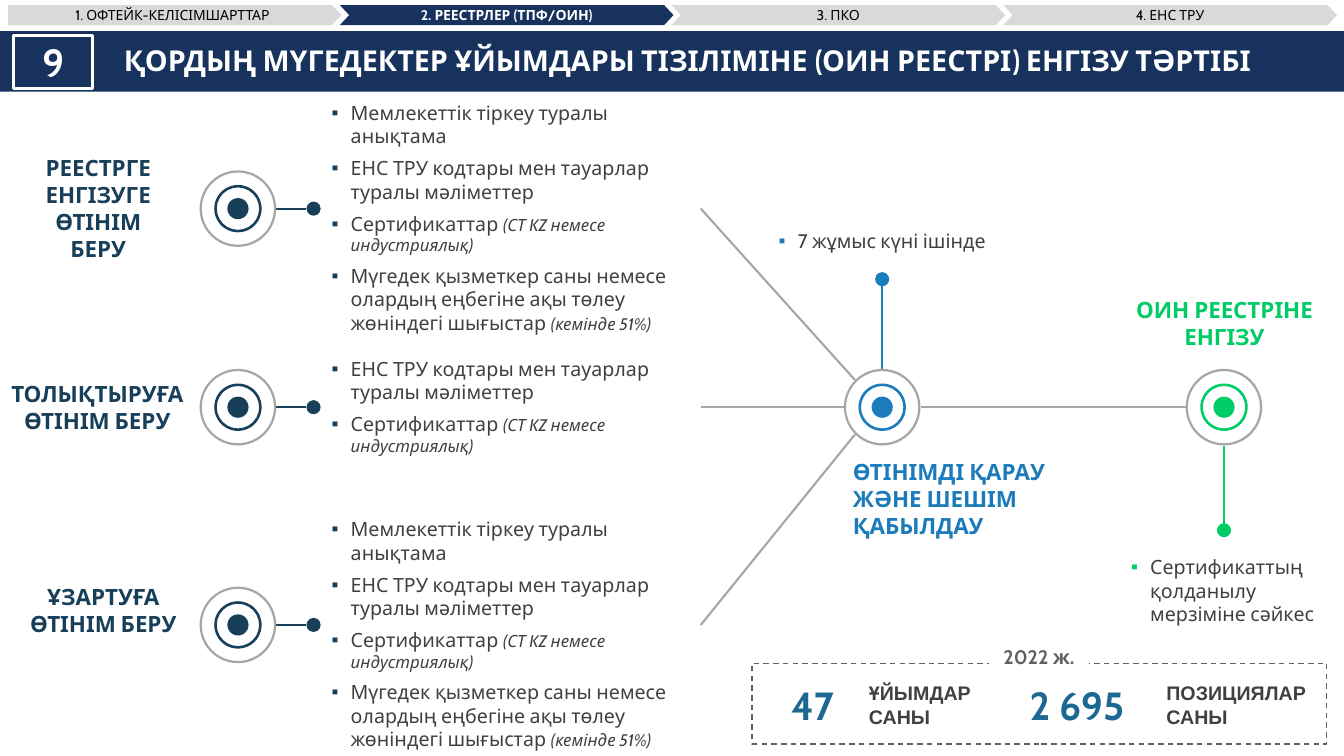
from lxml import etree
from pptx import Presentation
from pptx.dml.color import RGBColor
from pptx.enum.dml import MSO_LINE
from pptx.enum.shapes import MSO_CONNECTOR, MSO_SHAPE
from pptx.enum.text import MSO_ANCHOR, MSO_AUTO_SIZE, PP_ALIGN
from pptx.oxml.ns import qn
from pptx.util import Inches, Pt

RECT, OVAL, DONUT = MSO_SHAPE.RECTANGLE, MSO_SHAPE.OVAL, MSO_SHAPE.DONUT
CHEVRON, PENTAGON = MSO_SHAPE.CHEVRON, MSO_SHAPE.PENTAGON
STRAIGHT, DASH = MSO_CONNECTOR.STRAIGHT, MSO_LINE.DASH
LEFT, CENTER = PP_ALIGN.LEFT, PP_ALIGN.CENTER
MIDDLE, GROW = MSO_ANCHOR.MIDDLE, MSO_AUTO_SIZE.SHAPE_TO_FIT_TEXT

WIDTH, HEIGHT = 13.33, 7.5
COLORS = {
    "band": "17335D", "navy": "173F59", "blue": "1C7CBB", "green": "00CC66",
    "grey": "A6A6A6", "tab": "D9D9D9", "text": "404040", "figure": "1B6893",
    "frame": "606060", "white": "FFFFFF", "black": "000000",
}

# Content: a paragraph is a string, or a (plain, italic) pair
TABS = ["1. ОФТЕЙК-КЕЛІСІМШАРТТАР", "2. РЕЕСТРЛЕР (ТПФ/ОИН)", "3. ПКО", "4. ЕНС ТРУ"]
ACTIVE_TAB = 1
PAGE_NUMBER = "9"
TITLE = "ҚОРДЫҢ МҮГЕДЕКТЕР ҰЙЫМДАРЫ ТІЗІЛІМІНЕ (ОИН РЕЕСТРІ) ЕНГІЗУ ТӘРТІБІ"

CODES = "ЕНС ТРУ кодтары мен тауарлар туралы мәліметтер"
CERTIFICATES = ("Сертификаттар ", "(СТ KZ немесе индустриялық)")
FULL_LIST = [
    "Мемлекеттік тіркеу туралы анықтама",
    CODES,
    CERTIFICATES,
    ("Мүгедек қызметкер саны немесе олардың еңбегіне ақы төлеу жөніндегі шығыстар ",
     "(кемінде 51%)"),
]
# label, label area, row centre, documents, top of the documents
APPLICATIONS = [
    ("РЕЕСТРГЕ ЕНГІЗУГЕ ӨТІНІМ БЕРУ", (0.19, 1.48, 1.57, 1.18), 2.07, FULL_LIST, 0.95),
    ("ТОЛЫҚТЫРУҒА ӨТІНІМ БЕРУ", (-0.06, 3.72, 2.05, 0.64), 4.04, [CODES, CERTIFICATES], 3.49),
    ("ҰЗАРТУҒА ӨТІНІМ БЕРУ", (0.19, 5.74, 1.67, 0.91), 6.2, FULL_LIST, 5.08),
]
# colour, centre x, end of the stem, heading, its area and alignment, note, its area and alignment
STAGES = [
    ("blue", 8.75, 2.77, "ӨТІНІМДІ ҚАРАУ ЖӘНЕ ШЕШІМ ҚАБЫЛДАУ", (8.36, 4.5, 2.21, 0.91), LEFT,
     "7 жұмыс күні ішінде", (7.6, 2.22, 2.3, 0.34), CENTER),
    ("green", 12.14, 5.26, "ОИН РЕЕСТРІНЕ ЕНГІЗУ", (11.08, 2.89, 2.13, 0.64), CENTER,
     "Сертификаттың қолданылу мерзіміне сәйкес", (11.12, 5.46, 2.03, 0.81), LEFT),
]
PERIOD = "2022 ж."
# figure, left, width, caption, left, width
STATISTICS = [
    ("47", 7.71, 0.7, "ҰЙЫМДАР САНЫ", 8.52, 1.46),
    ("2 695", 10.02, 1.32, "ПОЗИЦИЯЛАР САНЫ", 11.47, 1.59),
]

# Layout
TAB_LEFT, TAB_STEP, TAB_WIDTH = 0.08, 3.29, 3.31
APPLICATION_X, DOT_X, DOCUMENTS_X, FAN_X = 2.36, 3.11, 3.19, 6.95
AXIS_Y = APPLICATIONS[1][2]
RING, INNER_RING, CORE, DOT = 0.76, 0.47, 0.21, 0.14
RADIUS = RING / 2
FAN_ENDS = [(8.48, 3.77), (8.75 - RADIUS, AXIS_Y), (8.48, 4.31)]

deck = Presentation()
deck.slide_width, deck.slide_height = Inches(WIDTH), Inches(HEIGHT)
page = deck.slides.add_slide(deck.slide_layouts[6])


def rgb(name):
    return RGBColor.from_string(COLORS[name])


def add_bullet(para, color):
    properties = para._p.get_or_add_pPr()
    indent = Inches(0.19)
    properties.set("marL", str(indent))
    properties.set("indent", str(-indent))
    tint = etree.SubElement(properties, qn("a:buClr"))
    etree.SubElement(tint, qn("a:srgbClr"), val=COLORS[color])
    etree.SubElement(properties, qn("a:buFont"), typeface="Arial")
    etree.SubElement(properties, qn("a:buChar"), char="▪")


def write(box, paragraphs, size, color, bold=False, align=LEFT, font="Cabin",
          bullet=None, after=None, wrap=True, fit=GROW):
    frame = box.text_frame
    frame.word_wrap = wrap
    frame.auto_size = fit
    frame.vertical_anchor = MSO_ANCHOR.TOP
    for index, content in enumerate(paragraphs):
        para = frame.paragraphs[0] if index == 0 else frame.add_paragraph()
        para.alignment = align
        if bullet:
            add_bullet(para, bullet)
        if after:
            para.space_after = Pt(after)
        pieces = (content,) if isinstance(content, str) else content
        for position, piece in enumerate(pieces):
            italic = position > 0
            span = para.add_run()
            span.text = piece
            look = {"name": font, "size": Pt(12 if italic else size),
                    "bold": bold, "italic": italic}
            for key, value in look.items():
                setattr(span.font, key, value)
            span.font.color.rgb = rgb(color)


def add_text(area, paragraphs, size, color, **options):
    box = page.shapes.add_textbox(*map(Inches, area))
    write(box, paragraphs, size, color, **options)


def add_shape(kind, area, fill=None, line=None, weight=1, adjust=None):
    shape = page.shapes.add_shape(kind, *map(Inches, area))
    shape.shadow.inherit = False
    if fill:
        shape.fill.solid()
        shape.fill.fore_color.rgb = rgb(fill)
    else:
        shape.fill.background()
    if line:
        shape.line.color.rgb = rgb(line)
        shape.line.width = Pt(weight)
    else:
        shape.line.fill.background()
    if adjust is not None:
        shape.adjustments[0] = adjust
    return shape


def add_line(start, end, color):
    line = page.shapes.add_connector(STRAIGHT, *map(Inches, (*start, *end)))
    line.line.color.rgb = rgb(color)
    line.line.width = Pt(1.5)
    etree.SubElement(line._element.spPr, qn("a:effectLst"))


def add_round(kind, x, y, size, color, adjust=None):
    """Place a circle or ring by its centre."""
    add_shape(kind, (x - size / 2, y - size / 2, size, size), color, adjust=adjust)


def add_target(x, y, color):
    add_round(OVAL, x, y, CORE, color)
    add_round(DONUT, x, y, INNER_RING, color, 0.053)
    add_round(DONUT, x, y, RING, "grey", 0.029)


def add_header():
    add_shape(RECT, (0, 0.31, WIDTH, 0.6), "band")
    add_shape(RECT, (0.13, 0.35, 0.79, 0.53), line="white", weight=2.25)
    add_text((0.1, 0.33, 0.86, 0.57), [PAGE_NUMBER], 28, "white",
             bold=True, align=CENTER, wrap=False)
    add_text((1.13, 0.38, 12.07, 0.45), [TITLE], 20.5, "white", bold=True)
    for index, name in enumerate(TABS):
        active = index == ACTIVE_TAB
        kind, adjust = (CHEVRON, 0.467) if index else (PENTAGON, 0.5)
        tab = add_shape(kind, (TAB_LEFT + index * TAB_STEP, 0.05, TAB_WIDTH, 0.2),
                        "band" if active else "tab", adjust=adjust)
        write(tab, [name], 10, "white" if active else "black", bold=active,
              align=CENTER, fit=MSO_AUTO_SIZE.NONE)
        tab.text_frame.vertical_anchor = MIDDLE
        for side in ("left", "top", "right", "bottom"):
            setattr(tab.text_frame, f"margin_{side}", Inches(0.1))


def add_applications():
    for (label, area, y, documents, top), fan_end in zip(APPLICATIONS, FAN_ENDS):
        add_text(area, [label], 16, "navy", bold=True, align=CENTER)
        add_line((APPLICATION_X + RADIUS, y), (DOT_X - DOT / 2, y), "navy")
        add_target(APPLICATION_X, y, "navy")
        add_round(OVAL, DOT_X, y, DOT, "navy")
        height = 2.24 if len(documents) > 2 else 1.09
        add_text((DOCUMENTS_X, top, FAN_X - DOCUMENTS_X, height), documents, 14, "text",
                 bullet="navy", after=6)
        add_line((FAN_X, y), fan_end, "grey")


def add_stages():
    first, last = (stage[1] for stage in STAGES)
    add_line((first + RADIUS, AXIS_Y), (last - RADIUS, AXIS_Y), "grey")
    for color, x, stem_y, heading, area, align, note, note_area, note_align in STAGES:
        edge = AXIS_Y + (RADIUS if stem_y > AXIS_Y else -RADIUS)
        add_line((x, edge), (x, stem_y), color)
        add_target(x, AXIS_Y, color)
        add_round(OVAL, x, stem_y, DOT, color)
        add_text(area, [heading], 16, color, bold=True, align=align)
        add_text(note_area, [note], 14, "text", bullet=color, align=note_align)


def add_statistics():
    frame = add_shape(RECT, (7.46, 6.58, 5.7, 0.8), line="frame")
    frame.line.dash_style = DASH
    period = add_shape(RECT, (9.81, 6.35, 0.99, 0.34), "white")
    write(period, [PERIOD], 14, "frame", bold=True, align=CENTER, wrap=False)
    for figure, left, width, caption, caption_left, caption_width in STATISTICS:
        add_text((left, 6.71, width, 0.57), [figure], 28, "figure",
                 bold=True, align=CENTER, wrap=False)
        add_text((caption_left, 6.71, caption_width, 0.57), [caption], 14, "text",
                 bold=True, font="Arial")


add_header()
add_applications()
add_stages()
add_statistics()
deck.save("out.pptx")
